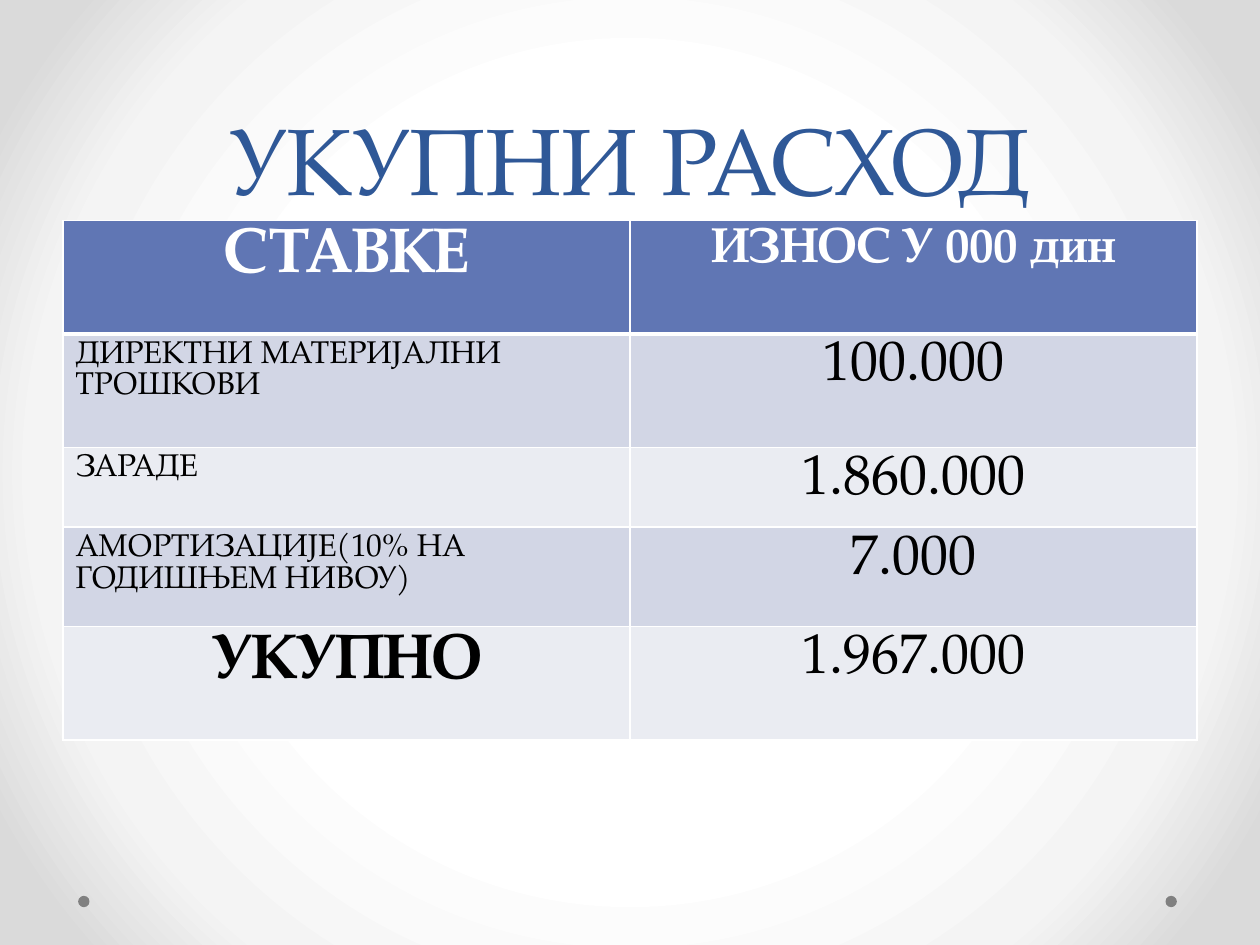
from pptx import Presentation
from pptx.dml.color import RGBColor
from pptx.enum.shapes import MSO_SHAPE
from pptx.enum.text import MSO_ANCHOR, PP_ALIGN
from pptx.oxml import parse_xml
from pptx.oxml.ns import nsdecls, qn
from pptx.util import Inches, Pt

OVAL = MSO_SHAPE.OVAL
LEFT, MID = PP_ALIGN.LEFT, PP_ALIGN.CENTER
BASE = MSO_ANCHOR.BOTTOM

# Content
FONT = "TeX Gyre Pagella"
TITLE = "УКУПНИ РАСХОД"
GLOW = [(50, "FFFFFF"), (76, "F4F4F4"), (92, "DADADA")]
# Row height, then text, size, bold and alignment of each cell
ROWS = [
    (0.9, ("СТАВКЕ", 36, True, MID), ("ИЗНОС У 000 дин", 28, True, MID)),
    (0.9, ("ДИРЕКТНИ МАТЕРИЈАЛНИ ТРОШКОВИ", 18, False, LEFT),
     ("100.000", 32, False, MID)),
    (0.59, ("ЗАРАДЕ", 18, False, LEFT), ("1.860.000", 32, False, MID)),
    (0.79, ("АМОРТИЗАЦИЈЕ(10% НА ГОДИШЊЕМ НИВОУ)", 18, False, LEFT),
     ("7.000", 32, False, MID)),
    (0.9, ("УКУПНО", 36, True, MID), ("1.967.000", 32, False, MID)),
]
HEAD, BANDS = "6076B4", ("EAECF2", "D2D6E5")

# Layout
WIDE, HIGH = 10, 7.5
EDGE, TOP = 0.5, 1.75
SPAN = WIDE - 2 * EDGE
DOT, DOT_TOP = 0.09, 7.11
DOTS = (0.62, 9.25)


def color(code):
    return RGBColor.from_string(code)


def write(para, text, size, code, bold, align):
    para.alignment = align
    run = para.add_run()
    run.text = text
    font = run.font
    font.name, font.size, font.bold = FONT, Pt(size), bold
    font.color.rgb = color(code)


def border(cell, last):
    props = cell._tc.get_or_add_tcPr()
    for spot, side in enumerate("LRTB"):
        width = Pt(3 if last and side == "B" else 1)
        props.insert(spot, parse_xml(
            f'<a:ln{side} {nsdecls("a")} w="{width}"><a:solidFill>'
            f'<a:srgbClr val="FFFFFF"/></a:solidFill></a:ln{side}>'))


deck = Presentation()
deck.slide_width, deck.slide_height = Inches(WIDE), Inches(HIGH)
slide = deck.slides.add_slide(deck.slide_layouts[6])

# Background glow
slide.background.fill.gradient()
old = slide.element.find(".//" + qn("a:gradFill"))
stops = "".join(f'<a:gs pos="{pos * 1000}"><a:srgbClr val="{code}"/></a:gs>'
                for pos, code in GLOW)
old.getparent().replace(old, parse_xml(
    f'<a:gradFill {nsdecls("a")} rotWithShape="1"><a:gsLst>{stops}</a:gsLst>'
    '<a:path path="circle"><a:fillToRect l="50000" t="50000" r="50000" '
    'b="50000"/></a:path></a:gradFill>'))

# Corner dots
for left in DOTS:
    dot = slide.shapes.add_shape(OVAL, Inches(left), Inches(DOT_TOP),
                                 Inches(DOT), Inches(DOT))
    dot.shadow.inherit = False
    dot.fill.solid()
    dot.fill.fore_color.rgb = color("808080")
    dot.line.fill.background()

# Title
frame = slide.shapes.add_textbox(Inches(EDGE), 0, Inches(SPAN),
                                 Inches(TOP)).text_frame
frame.word_wrap = True
frame.vertical_anchor = BASE
frame.paragraphs[0].line_spacing = Pt(58)
write(frame.paragraphs[0], TITLE, 54, "2F5897", False, MID)

# Table
tall = sum(row[0] for row in ROWS)
table = slide.shapes.add_table(len(ROWS), 2, Inches(EDGE), Inches(TOP),
                               Inches(SPAN), Inches(tall)).table
for r, (height, *cells) in enumerate(ROWS):
    table.rows[r].height = Inches(height)
    for c, (text, size, bold, align) in enumerate(cells):
        cell = table.cell(r, c)
        cell.fill.solid()
        cell.fill.fore_color.rgb = color(BANDS[r % 2] if r else HEAD)
        border(cell, r == 0)
        write(cell.text_frame.paragraphs[0], text, size,
              "000000" if r else "FFFFFF", bold, align)

deck.save("out.pptx")
